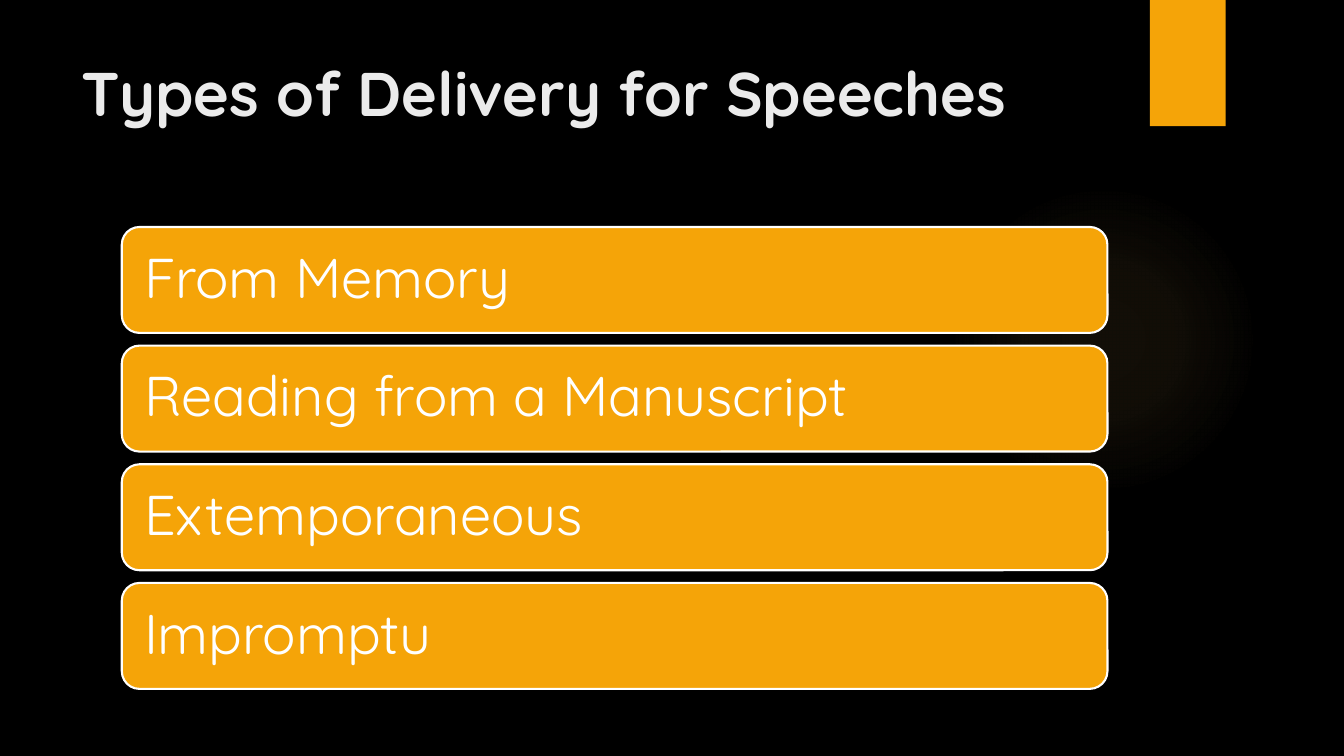
from pptx import Presentation
from pptx.dml.color import RGBColor
from pptx.enum.shapes import MSO_SHAPE as Shape
from pptx.enum.text import MSO_ANCHOR as Anchor, PP_ALIGN as Align
from pptx.oxml import parse_xml
from pptx.oxml.ns import nsdecls
from pptx.util import Cm, Pt

# Content
TITLE = "Types of Delivery for Speeches"
DELIVERY_TYPES = ["From Memory", "Reading from a Manuscript", "Extemporaneous", "Impromptu"]

# Style
FONT = "Quicksand"
COLORS = {"back": "000000", "accent": "F5A408", "glow": "FAC96A",
          "title": "EBEBEB", "white": "FFFFFF"}
GLOW_STOPS = [(0, 7), (36, 6), (69, 0)]  # position and opacity, in percent

# Layout in centimetres
BAR_LEFT, BAR_TOP, BAR_WIDTH, BAR_HEIGHT = 3.07, 5.72, 24.84, 2.67
BAR_PITCH = 2.99


def color(name):
    return RGBColor.from_string(COLORS[name])


def add_shape(kind, left, top, width, height, fill=None):
    shape = slide.shapes.add_shape(kind, Cm(left), Cm(top), Cm(width), Cm(height))
    shape.line.fill.background()
    shape.shadow.inherit = False
    if fill:
        shape.fill.solid()
        shape.fill.fore_color.rgb = color(fill)
    return shape


def add_text(frame, text, size, color_name, bold=False):
    frame.word_wrap = True
    para = frame.paragraphs[0]
    para.alignment = Align.LEFT
    span = para.add_run()
    span.text = text
    span.font.name = FONT
    span.font.size = Pt(size)
    span.font.bold = bold
    span.font.color.rgb = color(color_name)
    return para


deck = Presentation()
deck.slide_width, deck.slide_height = Cm(33.87), Cm(19.05)
slide = deck.slides.add_slide(deck.slide_layouts[6])
slide.background.fill.solid()
slide.background.fill.fore_color.rgb = color("back")

# Soft round glow
glow = add_shape(Shape.OVAL, 23.9, 4.65, 7.82, 7.82)
stops = "".join(
    f'<a:gs pos="{place * 1000}"><a:srgbClr val="{COLORS["glow"]}">'
    f'<a:alpha val="{opacity * 1000}"/></a:srgbClr></a:gs>'
    for place, opacity in GLOW_STOPS)
gradient = parse_xml(
    f'<a:gradFill {nsdecls("a")} rotWithShape="1"><a:gsLst>{stops}</a:gsLst>'
    '<a:path path="circle"><a:fillToRect l="50000" t="50000" r="50000" b="50000"/></a:path>'
    '</a:gradFill>')
glow._element.spPr.insert(2, gradient)  # after position and geometry

# Corner tab
add_shape(Shape.RECTANGLE, 28.98, 0, 1.91, 3.18, "accent")

# Title
title_box = slide.shapes.add_textbox(Cm(1.8), Cm(1.27), Cm(26.14), Cm(3.89))
add_text(title_box.text_frame, TITLE, 44, "title", bold=True)

# One bar per delivery type
for index, delivery in enumerate(DELIVERY_TYPES):
    bar = add_shape(Shape.ROUNDED_RECTANGLE, BAR_LEFT, BAR_TOP + index * BAR_PITCH,
                    BAR_WIDTH, BAR_HEIGHT, "accent")
    bar.line.color.rgb = color("white")
    bar.line.width = Pt(1.5)
    frame = bar.text_frame
    frame.vertical_anchor = Anchor.MIDDLE
    frame.margin_left = frame.margin_right = Cm(0.43)
    frame.margin_top = frame.margin_bottom = Cm(0.43)
    add_text(frame, delivery, 40, "white").line_spacing = 0.9

deck.save("out.pptx")
